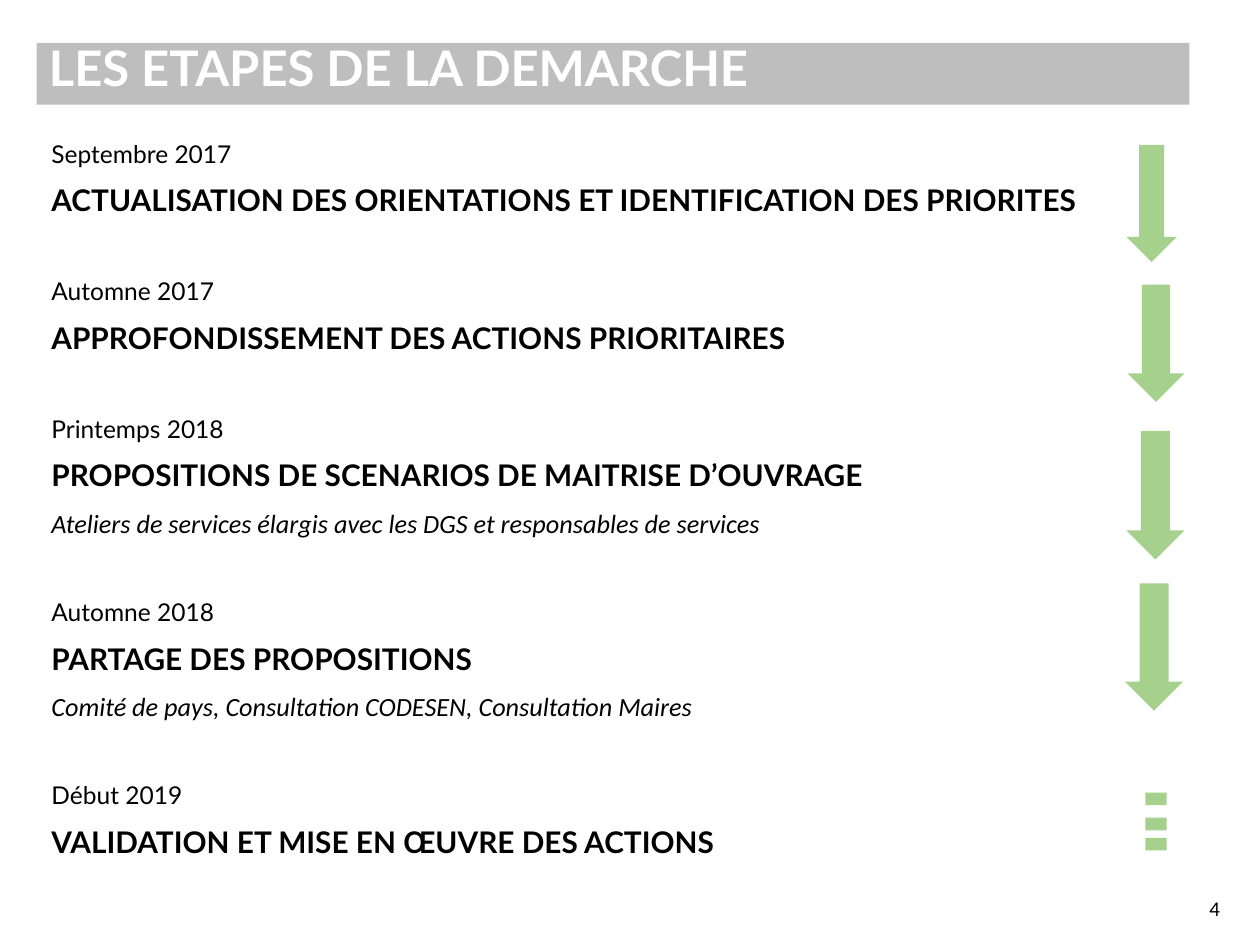
from lxml.etree import SubElement
from pptx import Presentation
from pptx.dml.color import RGBColor
from pptx.enum.shapes import MSO_SHAPE as SHAPE
from pptx.enum.text import MSO_ANCHOR as ANCHOR, PP_ALIGN as ALIGN
from pptx.oxml.ns import qn
from pptx.util import Inches, Pt

WIDTH, HEIGHT = Inches(10), Inches(7.5)
COLS, ROWS = 100, 75
GREEN, GREY, BLACK, WHITE = "7BBB56", "7F7F7F", "000000", "FFFFFF"

STEPS = [
    ("Septembre 2017", "ACTUALISATION DES ORIENTATIONS ET IDENTIFICATION DES PRIORITES", None),
    ("Automne 2017", "APPROFONDISSEMENT DES ACTIONS PRIORITAIRES", None),
    ("Printemps 2018", "PROPOSITIONS DE SCENARIOS DE MAITRISE D’OUVRAGE",
     "Ateliers de services élargis avec les DGS et responsables de services"),
    ("Automne 2018", "PARTAGE DES PROPOSITIONS",
     "Comité de pays, Consultation CODESEN, Consultation Maires"),
    ("Début 2019", "VALIDATION ET MISE EN ŒUVRE DES ACTIONS", None),
]
ARROWS = [
    (89.4, 11.5, 4, 9.3),
    (89.5, 22.6, 4.5, 9.3),
    (89.4, 34.2, 4.6, 10.2),
    (89.3, 46.3, 4.6, 10.1),
]
DASH_ROWS = [62.9, 64.9, 66.5]


def color(value):
    return RGBColor.from_string(value)


def grid(col, row, cols, rows):
    return (int(WIDTH * col / COLS), int(HEIGHT * row / ROWS),
            int(WIDTH * cols / COLS), int(HEIGHT * rows / ROWS))


def add_block(slide, kind, cell, fill, opacity):
    sp = slide.shapes.add_shape(kind, *grid(*cell))
    sp.shadow.inherit = False
    sp.line.fill.background()
    sp.fill.solid()
    sp.fill.fore_color.rgb = color(fill)
    clr = sp.fill._xPr.find(qn("a:solidFill"))[0]
    SubElement(clr, qn("a:alpha")).set("val", str(opacity * 1000))
    return sp


def add_box(slide, cell, anchor=ANCHOR.TOP):
    tf = slide.shapes.add_textbox(*grid(*cell)).text_frame
    tf.word_wrap = True
    tf.vertical_anchor = anchor
    return tf


def write(tf, text, size, font="Lato", fill=BLACK, bold=False, italic=False,
          align=ALIGN.LEFT, before=10, spacing=0.9):
    first = not tf.text
    p = tf.paragraphs[0] if first else tf.add_paragraph()
    p.alignment = align
    p.line_spacing = spacing
    p.space_before = Pt(0 if first else before)
    r = p.add_run()
    r.text = text
    r.font.name = font
    r.font.size = Pt(size)
    r.font.bold = bold
    r.font.italic = italic
    r.font.color.rgb = color(fill)


def add_steps(slide):
    tf = add_box(slide, (3.1, 10.8, 88.7, 60.8))
    for date, title, detail in STEPS:
        write(tf, date, 14, before=35)
        write(tf, title, 17, bold=True)
        if detail:
            write(tf, detail, 15, font="Calibri", italic=True)


def add_title(slide):
    tf = add_block(slide, SHAPE.RECTANGLE, (2.9, 3.4, 91.5, 4.9), GREY, 50).text_frame
    tf.word_wrap = True
    tf.vertical_anchor = ANCHOR.TOP
    write(tf, "LES ETAPES DE LA DEMARCHE", 28, fill=WHITE, bold=True, spacing=0.8)


def main():
    prs = Presentation()
    prs.slide_width, prs.slide_height = WIDTH, HEIGHT
    slide = prs.slides.add_slide(prs.slide_layouts[6])
    add_steps(slide)
    number = add_box(slide, (75.3, 70.8, 22.5, 2.6), ANCHOR.MIDDLE)
    write(number, "4", 12, font="Calibri", align=ALIGN.RIGHT, spacing=1.0)
    for cell in ARROWS:
        add_block(slide, SHAPE.DOWN_ARROW, cell, GREEN, 67)
    for row in DASH_ROWS:
        add_block(slide, SHAPE.RECTANGLE, (90.9, row, 1.7, 1), GREEN, 67)
    add_title(slide)
    prs.save("out.pptx")


if __name__ == "__main__":
    main()
